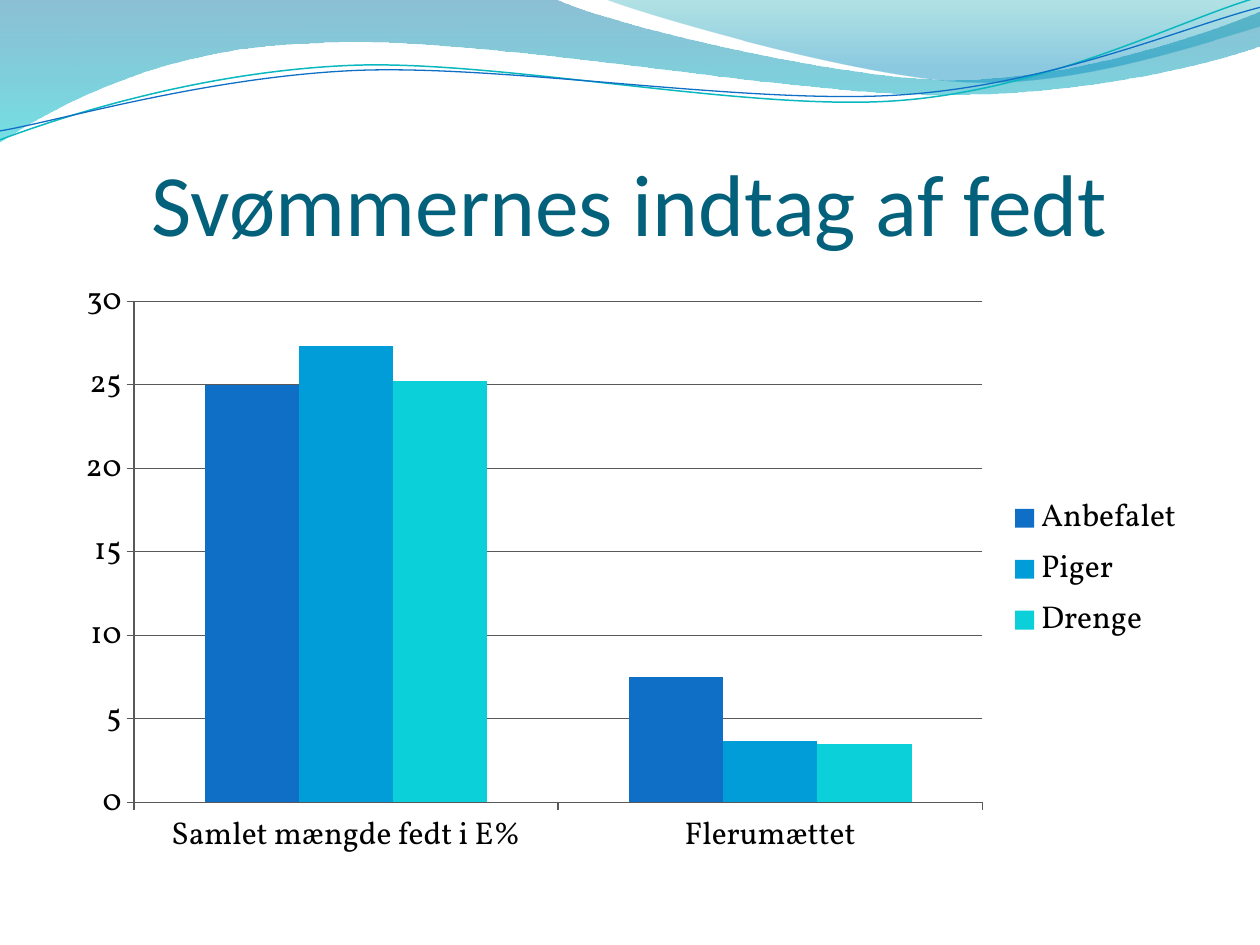
from lxml import etree
from pptx import Presentation
from pptx.chart.data import CategoryChartData
from pptx.dml.color import RGBColor
from pptx.enum.chart import XL_CHART_TYPE, XL_LEGEND_POSITION, XL_TICK_MARK
from pptx.enum.text import MSO_ANCHOR, PP_ALIGN
from pptx.oxml.ns import qn
from pptx.util import Cm, Pt

COLUMNS = XL_CHART_TYPE.COLUMN_CLUSTERED
LEGEND_RIGHT = XL_LEGEND_POSITION.RIGHT
OUTSIDE, NO_TICK = XL_TICK_MARK.OUTSIDE, XL_TICK_MARK.NONE
BOTTOM, CENTER = MSO_ANCHOR.BOTTOM, PP_ALIGN.CENTER

BLACK = RGBColor(0x00, 0x00, 0x00)
TITLE_TEAL = RGBColor(0x04, 0x61, 0x7B)
AXIS_GRAY = RGBColor(0x59, 0x59, 0x59)
BLUE = RGBColor(0x0F, 0x6F, 0xC6)
SKY = RGBColor(0x00, 0x9D, 0xD9)
TURQUOISE = RGBColor(0x0B, 0xD0, 0xD9)
LINE_TEAL = RGBColor(0x0A, 0xB8, 0xBF)
WAVE_BLUE = RGBColor(0x00, 0x74, 0xA1)
WAVE_CYAN = RGBColor(0x00, 0xC6, 0xCF)
CREST_TEAL = RGBColor(0x00, 0xA1, 0xA9)
CREST_BLUE = RGBColor(0x00, 0x8B, 0xBF)

# Outlines in cm: a start point, then (x, y) lines or six-number Bézier curves.
WAVE = [(0, 0), (11.18, -0.03),
        (12.09, 0.43, 16.87, 1.6, 19.25, 1.6),
        (21.67, 1.6, 24.33, 0.66, 25.4, 0.23), (25.43, 0.91),
        (24.97, 1.12, 22.1, 1.93, 18.95, 1.91),
        (15.8, 1.91, 9.7, 0.71, 6.53, 0.86),
        (3.28, 0.91, 1.17, 2.11, -0.03, 2.87), (0, 0)]
CREST = [(12.17, -0.03),
         (12.93, 0.28, 17.32, 1.57, 19.53, 1.65),
         (21.74, 1.75, 24.41, 0.81, 25.4, 0.53), (25.4, 0), (12.17, -0.03)]
TEAL_LINE = [(0, 2.82),
             (1.22, 2.36, 4.01, 1.45, 7.04, 1.32),
             (10.03, 1.19, 15.06, 2.26, 18.11, 2.03),
             (21.16, 1.8, 23.83, 0.38, 25.35, -0.05)]
BLUE_LINE = [(0, 2.64),
             (1.19, 2.44, 4.17, 1.55, 7.19, 1.42),
             (10.24, 1.3, 15.16, 2.13, 18.21, 1.91),
             (21.23, 1.7, 23.9, 0.53, 25.4, 0.15)]

CATEGORIES = ["Samlet mængde fedt i E%", "Flerumættet"]
SERIES = [("Anbefalet", (25, 7.5), BLUE),
          ("Piger", (27.3, 3.7), SKY),
          ("Drenge", (25.2, 3.5), TURQUOISE)]


def add_outline(s, outline, close):
    """Build the outline through its end points, then bend the curved segments."""
    start, *ends = [(Cm(seg[-2]), Cm(seg[-1])) for seg in outline]
    builder = s.shapes.build_freeform(*start)
    builder.add_line_segments(ends, close=close)
    sp = builder.convert_to_shape()
    sp.shadow.inherit = False
    segments = list(sp.element.spPr.iter(qn("a:lnTo")))
    for line, seg in zip(segments, outline[1:]):
        if len(seg) == 2:
            continue
        curve = etree.Element(qn("a:cubicBezTo"))
        for x, y in zip(seg[::2], seg[1::2]):
            etree.SubElement(curve, qn("a:pt"), x=str(Cm(x) - sp.left), y=str(Cm(y) - sp.top))
        line.getparent().replace(line, curve)
    return sp


def add_wave(s, outline, stops):
    """Add a shape fading downwards; stops are (position, colour, opacity %)."""
    sp = add_outline(s, outline, close=True)
    sp.line.fill.background()
    sp.fill.gradient()
    sp.fill.gradient_angle = 270
    for stop, (position, color, _) in zip(sp.fill.gradient_stops, stops):
        stop.position = position
        stop.color.rgb = color
    colors = sp.element.spPr.iter(qn("a:srgbClr"))
    for color, (_, _, opacity) in zip(colors, stops):
        etree.SubElement(color, qn("a:alpha"), val=str(opacity * 1000))


def add_wave_line(s, outline, color, width):
    sp = add_outline(s, outline, close=False)
    sp.fill.background()
    sp.line.color.rgb = color
    sp.line.width = Pt(width)


def add_text(s, text, left, top, width, height, *, font, size, color, align, anchor):
    tf = s.shapes.add_textbox(Cm(left), Cm(top), Cm(width), Cm(height)).text_frame
    tf.word_wrap = True
    tf.vertical_anchor = anchor
    tf.margin_left = tf.margin_right = tf.margin_bottom = 0
    p = tf.paragraphs[0]
    p.alignment = align
    r = p.add_run()
    r.text = text
    r.font.name = font
    r.font.size = Pt(size)
    r.font.color.rgb = color


def style_line(line):
    line.color.rgb = AXIS_GRAY
    line.width = Pt(0.75)


def add_fat_chart(s):
    data = CategoryChartData()
    data.categories = CATEGORIES
    for name, values, _ in SERIES:
        data.add_series(name, values)
    chart = s.shapes.add_chart(COLUMNS, Cm(1.27), Cm(5.38), Cm(22.86), Cm(12.19), data).chart
    chart.has_title = False
    chart.font.name = "Vollkorn"
    chart.font.size = Pt(18)
    chart.font.color.rgb = BLACK

    plot = chart.plots[0]
    plot.vary_by_categories = False
    plot.gap_width = 150
    for series, (_, _, color) in zip(plot.series, SERIES):
        series.format.fill.solid()
        series.format.fill.fore_color.rgb = color

    for axis in (chart.category_axis, chart.value_axis):
        axis.major_tick_mark = OUTSIDE
        axis.minor_tick_mark = NO_TICK
        style_line(axis.format.line)
    axis = chart.value_axis
    axis.minimum_scale, axis.maximum_scale, axis.major_unit = 0, 30, 5
    axis.has_major_gridlines = True
    style_line(axis.major_gridlines.format.line)

    chart.has_legend = True
    chart.legend.position = LEGEND_RIGHT
    chart.legend.include_in_layout = False


def main():
    prs = Presentation()
    prs.slide_width, prs.slide_height = Cm(25.4), Cm(19.05)
    s = prs.slides.add_slide(prs.slide_layouts[6])
    add_wave(s, WAVE, [(0, WAVE_BLUE, 45), (1, WAVE_CYAN, 55)])
    add_wave(s, CREST, [(0, CREST_TEAL, 30), (0.8, CREST_BLUE, 45)])
    add_wave_line(s, TEAL_LINE, LINE_TEAL, 0.85)
    add_wave_line(s, BLUE_LINE, BLUE, 0.75)
    add_text(s, "Svømmernes indtag af fedt", 1.27, 1.96, 22.86, 3.17, font="Calibri",
             size=50, color=TITLE_TEAL, align=CENTER, anchor=BOTTOM)
    add_fat_chart(s)
    prs.save("out.pptx")


if __name__ == "__main__":
    main()
